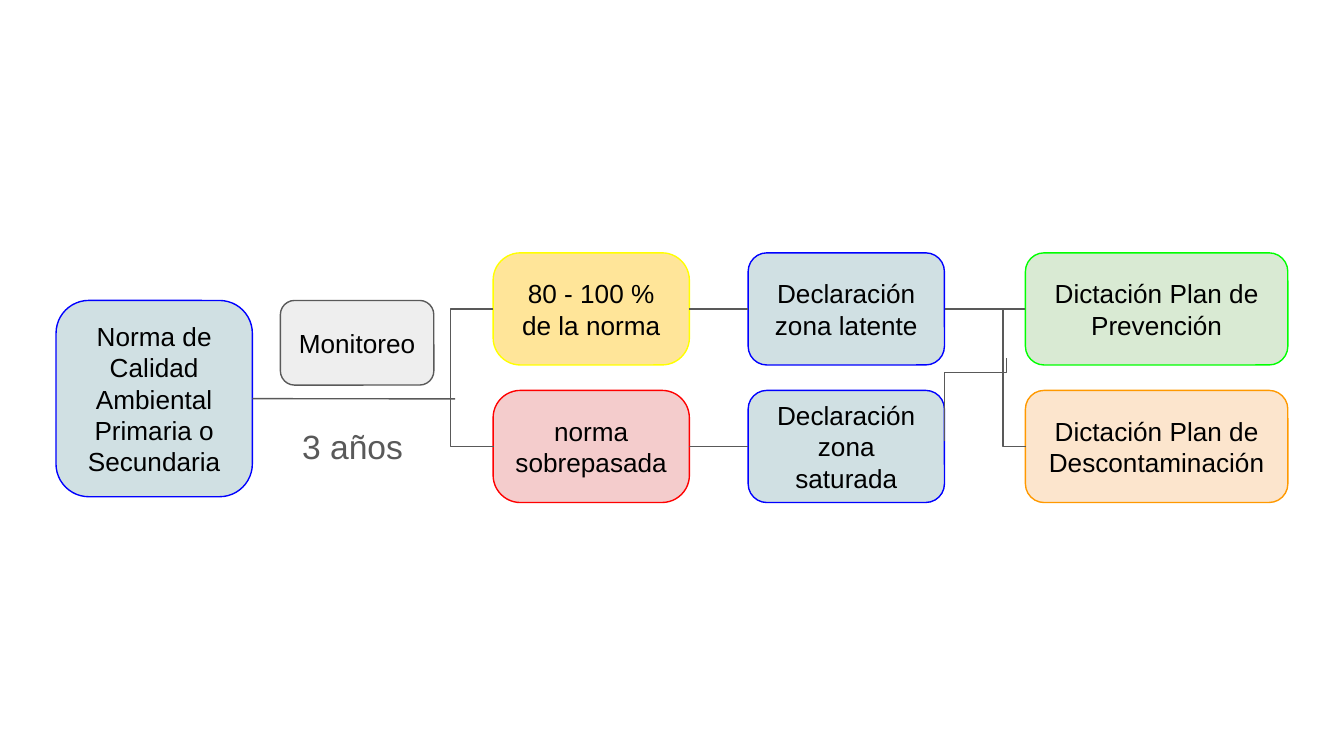
"""Build a slide with the steps from an air quality norm to its action plans."""
from lxml import etree
from pptx import Presentation
from pptx.dml.color import RGBColor
from pptx.enum.shapes import MSO_CONNECTOR, MSO_SHAPE
from pptx.enum.text import MSO_ANCHOR, MSO_AUTO_SIZE, PP_ALIGN
from pptx.oxml.ns import qn
from pptx.util import Cm, Pt

ROUNDED = MSO_SHAPE.ROUNDED_RECTANGLE
STRAIGHT, ELBOW = MSO_CONNECTOR.STRAIGHT, MSO_CONNECTOR.ELBOW
MIDDLE, TOP = MSO_ANCHOR.MIDDLE, MSO_ANCHOR.TOP
CENTER, LEFT = PP_ALIGN.CENTER, PP_ALIGN.LEFT
GROW = MSO_AUTO_SIZE.SHAPE_TO_FIT_TEXT

BLACK = RGBColor(0x00, 0x00, 0x00)
GRAY = RGBColor(0x59, 0x59, 0x59)
LIGHT_GRAY = RGBColor(0xEE, 0xEE, 0xEE)
BLUE = RGBColor(0x00, 0x00, 0xFF)
PALE_BLUE = RGBColor(0xD0, 0xE0, 0xE3)
YELLOW = RGBColor(0xFF, 0xFF, 0x00)
PALE_YELLOW = RGBColor(0xFF, 0xE5, 0x99)
RED = RGBColor(0xFF, 0x00, 0x00)
PALE_RED = RGBColor(0xF4, 0xCC, 0xCC)
GREEN = RGBColor(0x00, 0xFF, 0x00)
PALE_GREEN = RGBColor(0xD9, 0xEA, 0xD3)
ORANGE = RGBColor(0xFF, 0x99, 0x00)
PALE_ORANGE = RGBColor(0xFC, 0xE5, 0xCD)

STEP_WIDTH, PLAN_WIDTH, STEP_HEIGHT = 3.71, 4.96, 2.12
LEVEL_LEFT, ZONE_LEFT, PLAN_LEFT = 9.32, 14.14, 19.38
UPPER_TOP, LOWER_TOP = 4.78, 7.38
UPPER_MIDDLE = UPPER_TOP + STEP_HEIGHT / 2
LOWER_MIDDLE = LOWER_TOP + STEP_HEIGHT / 2
BRACKET_WIDTH = 0.01


def write_text(frame, text, size=14, color=BLACK, align=CENTER, anchor=MIDDLE):
    """Fill a text frame, one paragraph per line of text."""
    frame.word_wrap = True
    frame.vertical_anchor = anchor
    frame.margin_left = frame.margin_right = Cm(0.25)
    frame.margin_top = frame.margin_bottom = Cm(0.25)
    frame.text = text
    for paragraph in frame.paragraphs:
        paragraph.alignment = align
        paragraph.font.name = "Arial"
        paragraph.font.size = Pt(size)
        paragraph.font.color.rgb = color


class Diagram:
    """Draw the elements of the flow on one slide."""

    line_width = Pt(0.75)

    def __init__(self, slide):
        self.shapes = slide.shapes

    def box(self, text, left, top, width, height, fill, line, rounding=0.167):
        """Add a rounded box with centred text."""
        shape = self.shapes.add_shape(
            ROUNDED, Cm(left), Cm(top), Cm(width), Cm(height))
        shape.adjustments[0] = rounding
        shape.shadow.inherit = False
        shape.fill.solid()
        shape.fill.fore_color.rgb = fill
        shape.line.color.rgb = line
        shape.line.width = self.line_width
        write_text(shape.text_frame, text)
        return shape

    def label(self, text, left, top, width, height):
        """Add a plain text label."""
        shape = self.shapes.add_textbox(Cm(left), Cm(top), Cm(width), Cm(height))
        write_text(shape.text_frame, text, size=18, color=GRAY, align=LEFT, anchor=TOP)
        shape.text_frame.auto_size = GROW

    def connector(self, kind, left, top, right, bottom):
        """Add a thin gray connector without a shadow."""
        connector = self.shapes.add_connector(
            kind, Cm(left), Cm(top), Cm(right), Cm(bottom))
        connector.line.color.rgb = GRAY
        connector.line.width = self.line_width
        etree.SubElement(connector._element.spPr, qn("a:effectLst"))
        return connector

    def join(self, source, target):
        """Join the right side of one box to the left side of another."""
        connector = self.connector(STRAIGHT, 0, 0, 1, 1)
        connector.begin_connect(source, 3)
        connector.end_connect(target, 1)

    def elbow(self, left, top, right, bottom, bend, rotation=0):
        """Add an elbow that bends at a share of its width, turned by degrees."""
        connector = self.connector(ELBOW, left, top, right, bottom)
        properties = connector._element.spPr
        guides = properties.find(qn("a:prstGeom")).find(qn("a:avLst"))
        etree.SubElement(guides, qn("a:gd"), name="adj1",
                         fmla=f"val {round(bend * 100000)}")
        if rotation:
            properties.find(qn("a:xfrm")).set("rot", str(rotation * 60000))

    def bracket(self, left, reach):
        """Add a bracket that spans both rows and reaches to the left."""
        self.elbow(left, UPPER_MIDDLE, left + BRACKET_WIDTH, LOWER_MIDDLE,
                   -reach / BRACKET_WIDTH)


def main():
    """Build and save the presentation."""
    presentation = Presentation()
    presentation.slide_width, presentation.slide_height = Cm(25.4), Cm(14.29)
    diagram = Diagram(presentation.slides.add_slide(presentation.slide_layouts[6]))

    norm = diagram.box("Norma de Calidad Ambiental\nPrimaria o Secundaria",
                       1.06, 5.68, STEP_WIDTH, STEP_WIDTH, PALE_BLUE, BLUE)
    diagram.box("Monitoreo", 5.3, 5.68, 2.9, 1.6, LIGHT_GRAY, GRAY)
    diagram.label("3 años", 5.46, 7.8, 2.59, 1.27)
    diagram.connector(STRAIGHT, 4.77, 7.54, 8.6, 7.54).begin_connect(norm, 3)

    rows = [
        (UPPER_TOP, [("80 - 100 % de la norma", PALE_YELLOW, YELLOW),
                     ("Declaración zona latente", PALE_BLUE, BLUE),
                     ("Dictación Plan de Prevención", PALE_GREEN, GREEN)]),
        (LOWER_TOP, [("norma sobrepasada", PALE_RED, RED),
                     ("Declaración zona saturada", PALE_BLUE, BLUE),
                     ("Dictación Plan de Descontaminación", PALE_ORANGE, ORANGE)]),
    ]
    columns = [(LEVEL_LEFT, STEP_WIDTH, 0.244), (ZONE_LEFT, STEP_WIDTH, 0.167),
               (PLAN_LEFT, PLAN_WIDTH, 0.167)]
    grid = [[diagram.box(text, left, top, width, STEP_HEIGHT, fill, line, rounding)
             for (text, fill, line), (left, width, rounding) in zip(steps, columns)]
            for top, steps in rows]

    for level, zone, plan in grid:
        diagram.join(level, zone)
    diagram.join(grid[0][1], grid[0][2])
    diagram.bracket(LEVEL_LEFT, 0.8)
    diagram.bracket(PLAN_LEFT, 0.42)
    diagram.elbow(17.65, 6.96, 19.22, 8.13, 0.82, rotation=270)

    presentation.save("out.pptx")


if __name__ == "__main__":
    main()
